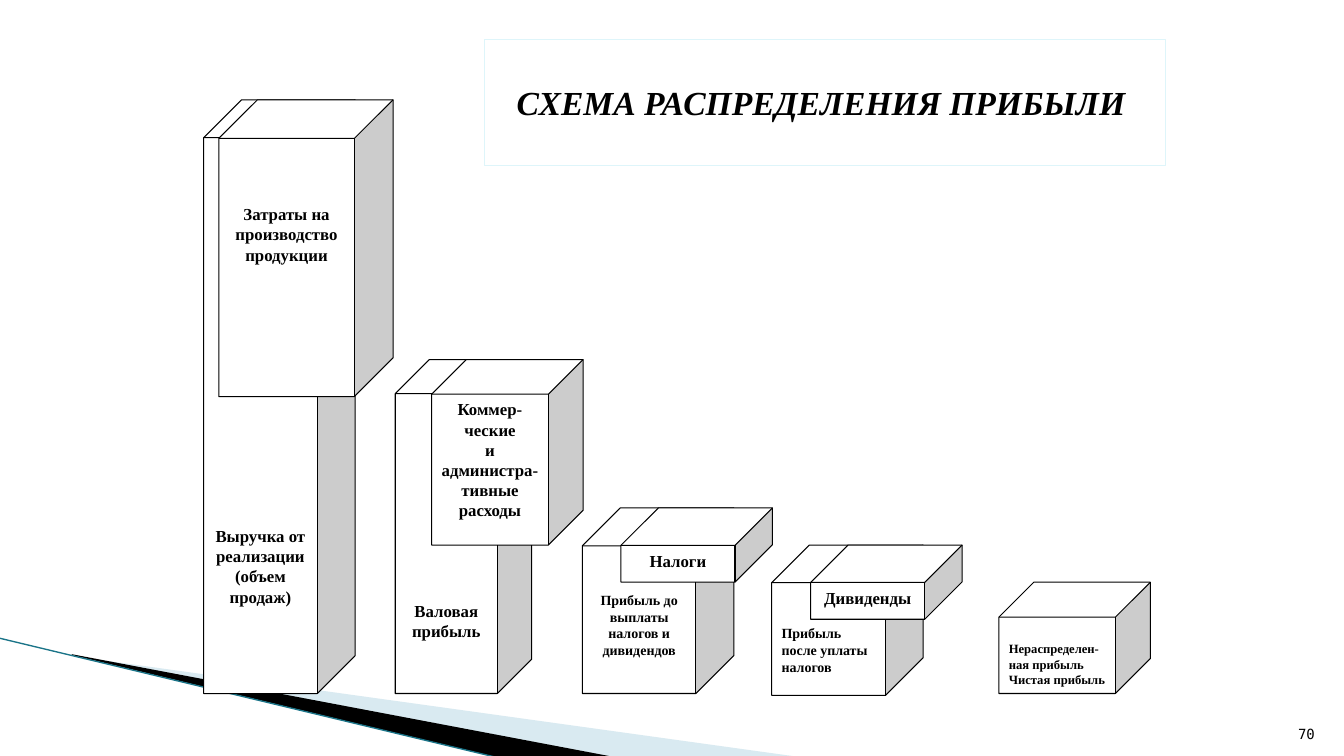
from lxml import etree
from pptx import Presentation, util as u
from pptx.dml.color import RGBColor
from pptx.enum import shapes, text
from pptx.oxml.ns import qn

W, H = 13.33, 7.5
SERIF, MONO = "Times New Roman", "DejaVu Sans Mono"
CENTER, LEFT, RIGHT = text.PP_ALIGN.CENTER, text.PP_ALIGN.LEFT, text.PP_ALIGN.RIGHT
COLS, ROWS = 25, 16

BARS = [
    (0, 0, 4, 16, 0.25, 3.85, 12, CENTER, ["Выручка от реализации (объем продаж)"]),
    (0.4, 0, 4.6, 8, 0.222, 0.65, 12, CENTER, ["Затраты на производство продукции"]),
    (15, 12, 4, 4.05, 0.25, 0.42, 10, LEFT, ["Прибыль после уплаты налогов"]),
    (21, 13, 4, 3, 0.314, 0.24, 9, LEFT, ["Нераспределен-ная прибыль", "Чистая прибыль"]),
    (10, 11, 4, 5, 0.25, 0.45, 10, CENTER, ["Прибыль до выплаты налогов и дивидендов"]),
    (5.06, 7, 3.6, 9, 0.25, 2.05, 12, CENTER, ["Валовая прибыль"]),
    (6.02, 7, 4, 5, 0.229, 0.05, 12, CENTER,
     ["Коммер-", "ческие", "и администра-тивные расходы"]),
    (11.02, 11, 4, 2, 0.504, 0.05, 12, CENTER, ["Налоги"]),
    (16.03, 12, 4, 2, 0.504, 0.05, 12, CENTER, ["Дивиденды"]),
]


def rgb(value):
    """Return the colour for a hex string."""
    return RGBColor.from_string(value)


def inches(*values):
    """Convert numbers to inch lengths."""
    return [u.Inches(v) for v in values]


def write(sp, lines, align, frame, **font):
    """Fill a shape with paragraphs in one format."""
    tf = sp.text_frame
    for name, value in frame.items():
        setattr(tf, name, value)
    for i, line in enumerate(lines):
        p = tf.paragraphs[0] if i == 0 else tf.add_paragraph()
        p.alignment = align
        r = p.add_run()
        r.text = line
        r.font.color.rgb = rgb("000000")
        for name, value in font.items():
            setattr(r.font, name, value)


def outline(sp, color, width=0.75):
    """Set the line colour and width of a shape."""
    sp.line.color.rgb = rgb(color)
    sp.line.width = u.Pt(width)


def wedge(s, box, points, color, alpha=100):
    """Draw a filled outline from points in hundredths of an inch."""
    left, top = box
    pts = [(left + x, top + y) for x, y in points]
    fb = s.shapes.build_freeform(*pts[0], scale=u.Inches(0.01))
    fb.add_line_segments(pts[1:], close=True)
    sp = fb.convert_to_shape()
    sp.shadow.inherit = False
    sp.fill.solid()
    sp.fill.fore_color.rgb = rgb(color)
    sp.line.fill.background()
    if alpha < 100:
        clr = sp.fill._xPr.find(".//" + qn("a:srgbClr"))
        etree.SubElement(clr, qn("a:alpha"), val=str(alpha * 1000))


def corner(s, box):
    """Draw the swoosh in the lower left corner."""
    left, top, width, height = box
    origin = (71, 649)
    wedge(s, origin, [(2, 2), (722, 102), (537, 102), (2, 1)], "A0CBDC", 40)
    wedge(s, origin, [(0, 0), (538, 102), (425, 103), (1, 1)], "000000")
    ln = s.shapes.add_connector(shapes.MSO_CONNECTOR.STRAIGHT,
                                *inches(left, top, left + width, top + height))
    outline(ln, "1A7488", 0.95)
    etree.SubElement(ln._element.spPr, qn("a:effectLst"))


def bars(s, box):
    """Place the cubes of the profit cascade on a grid."""
    left, top, width, height = box
    cw, rh = width / COLS, height / ROWS
    for col, row, cols, rows, depth, inset, size, align, lines in BARS:
        sp = s.shapes.add_shape(shapes.MSO_SHAPE.CUBE, *inches(
            left + col * cw, top + row * rh, cols * cw, rows * rh))
        sp.adjustments[0] = depth
        sp.shadow.inherit = False
        sp.fill.solid()
        sp.fill.fore_color.rgb = rgb("FFFFFF")
        outline(sp, "000000")
        frame = {"word_wrap": True, "vertical_anchor": text.MSO_ANCHOR.TOP,
                 "margin_top": u.Inches(inset), "margin_bottom": 0}
        write(sp, lines, align, frame, name=SERIF, size=u.Pt(size), bold=True)


def title(s, box):
    """Place the framed title."""
    sp = s.shapes.add_shape(shapes.MSO_SHAPE.RECTANGLE, *inches(*box))
    sp.shadow.inherit = False
    sp.fill.background()
    outline(sp, "DEF5FA")
    frame = {"word_wrap": False, "vertical_anchor": text.MSO_ANCHOR.MIDDLE}
    write(sp, ["СХЕМА РАСПРЕДЕЛЕНИЯ ПРИБЫЛИ "], CENTER, frame,
          name=SERIF, size=u.Pt(24), bold=True, italic=True)


def page_number(s, box):
    """Place the page number."""
    sp = s.shapes.add_textbox(*inches(*box))
    frame = {"word_wrap": True, "vertical_anchor": text.MSO_ANCHOR.BOTTOM}
    write(sp, ["70"], RIGHT, frame, name=MONO, size=u.Pt(10))


def main():
    """Build the slide and save it."""
    prs = Presentation()
    prs.slide_width, prs.slide_height = inches(W, H)
    s = prs.slides.add_slide(prs.slide_layouts[6])
    corner(s, (-0.01, 6.33, 4.96, 1.19))
    page_number(s, (12.61, 7.01, 0.53, 0.4))
    bars(s, (2.02, 0.99, 9.39, 5.89))
    title(s, (4.81, 0.39, 6.75, 1.25))
    prs.save("out.pptx")


if __name__ == "__main__":
    main()
